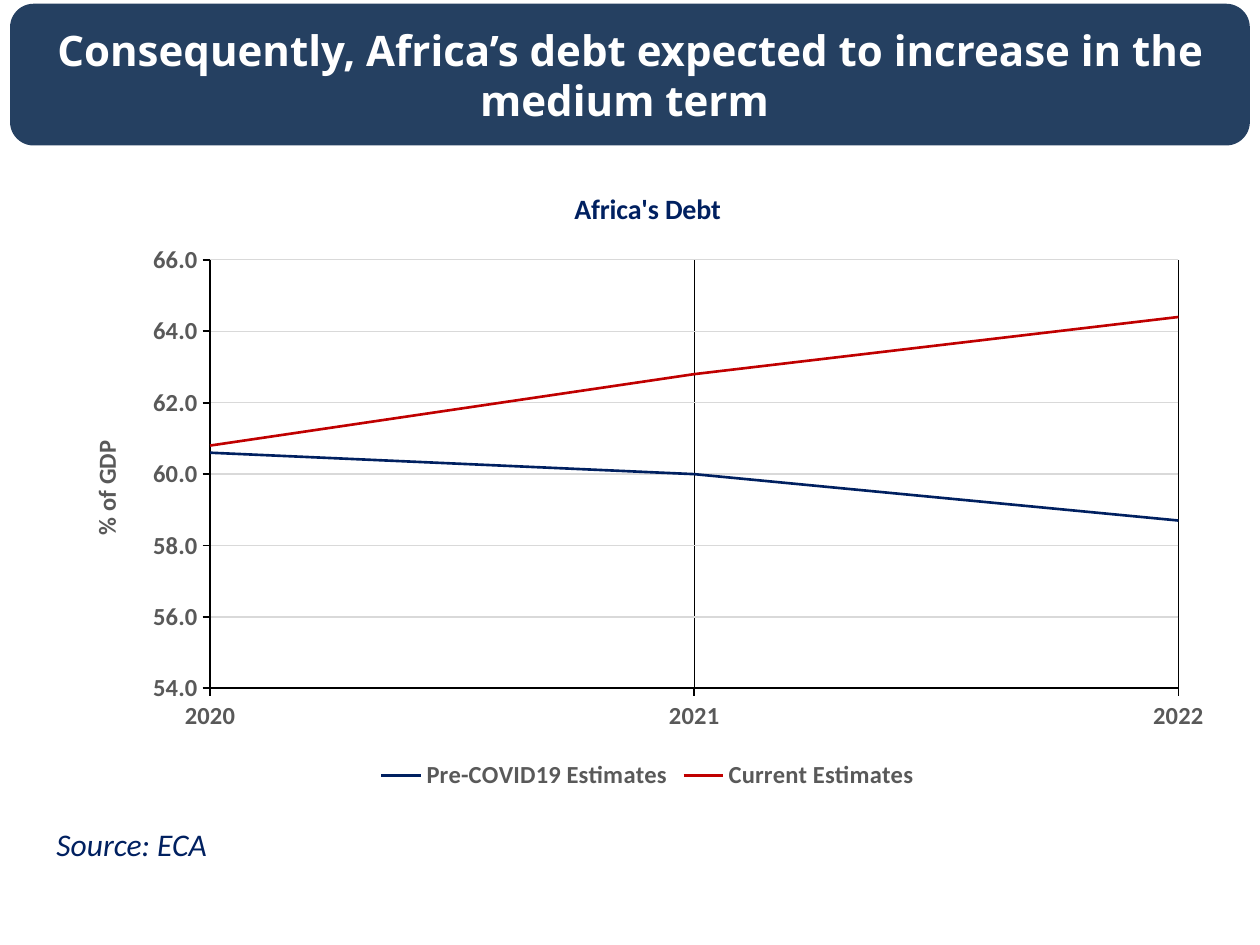
from lxml import etree
from pptx import Presentation
from pptx.chart.data import CategoryChartData
from pptx.dml.color import RGBColor
from pptx.enum.chart import XL_CHART_TYPE, XL_LEGEND_POSITION, XL_TICK_MARK
from pptx.enum.shapes import MSO_SHAPE
from pptx.enum.text import MSO_ANCHOR, PP_ALIGN
from pptx.oxml.ns import qn
from pptx.util import Inches, Pt

LINE = XL_CHART_TYPE.LINE
BOTTOM = XL_LEGEND_POSITION.BOTTOM
TICK_OUT, TICK_NONE = XL_TICK_MARK.OUTSIDE, XL_TICK_MARK.NONE
ROUNDED = MSO_SHAPE.ROUNDED_RECTANGLE
MIDDLE = MSO_ANCHOR.MIDDLE
CENTER, LEFT = PP_ALIGN.CENTER, PP_ALIGN.LEFT

SLIDE_WIDTH, SLIDE_HEIGHT = Inches(10), Inches(7.5)
BANNER, NAVY, RED = "254061", "002060", "C00000"
WHITE, BLACK, GREY, PALE = "FFFFFF", "000000", "595959", "D9D9D9"


def rgb(value):
    return RGBColor.from_string(value)


def style_font(font, size, color, name="Calibri", bold=False, italic=False):
    font.size, font.name = Pt(size), name
    font.bold, font.italic = bold, italic
    font.color.rgb = rgb(color)


def style_line(line, color, width):
    line.color.rgb = rgb(color)
    line.width = Pt(width)


def set_title(title, text, size, color):
    title.text_frame.text = text
    run = title.text_frame.paragraphs[0].runs[0]
    style_font(run.font, size, color, bold=True)


def place_plot(chart, x, y, w, h):
    """Fix the inner plot area, in shares of the chart's size."""
    plot_area = chart.plots[0]._element.getparent()
    for old in plot_area.findall(qn("c:layout")):
        plot_area.remove(old)
    layout = etree.Element(qn("c:layout"))
    manual = etree.SubElement(layout, qn("c:manualLayout"))
    settings = dict(layoutTarget="inner", xMode="edge", yMode="edge",
                    x=x, y=y, w=w, h=h)
    for tag, value in settings.items():
        etree.SubElement(manual, qn(f"c:{tag}")).set("val", str(value))
    plot_area.insert(0, layout)


class DebtSlide:
    """Places elements on one slide by shares of its size."""

    def __init__(self, presentation):
        self.slide = presentation.slides.add_slide(presentation.slide_layouts[6])

    def box(self, x, y, w, h):
        return (int(x * SLIDE_WIDTH), int(y * SLIDE_HEIGHT),
                int(w * SLIDE_WIDTH), int(h * SLIDE_HEIGHT))

    def set_text(self, frame, text, align, **font):
        frame.word_wrap = True
        frame.text = text
        paragraph = frame.paragraphs[0]
        paragraph.alignment = align
        style_font(paragraph.runs[0].font, **font)

    def banner(self, area, text):
        banner = self.slide.shapes.add_shape(ROUNDED, *self.box(*area))
        banner.shadow.inherit = False
        banner.fill.solid()
        banner.fill.fore_color.rgb = rgb(BANNER)
        banner.line.fill.background()
        frame = banner.text_frame
        frame.vertical_anchor = MIDDLE
        frame.margin_top = frame.margin_bottom = Inches(0.1)
        self.set_text(frame, text, CENTER, size=24, color=WHITE,
                      name="Noto Sans", bold=True)

    def source(self, area, text):
        note = self.slide.shapes.add_textbox(*self.box(*area))
        self.set_text(note.text_frame, text, LEFT,
                      size=18, color=NAVY, italic=True)

    def line_chart(self, area, title, unit, years, estimates):
        """Draw estimates, a dict of name to (colour, values)."""
        data = CategoryChartData(number_format="0.0")
        data.categories = years
        for name, (_, values) in estimates.items():
            data.add_series(name, values)
        chart = self.slide.shapes.add_chart(LINE, *self.box(*area), data).chart
        style_font(chart.font, 10, BLACK)
        set_title(chart.chart_title, title, 16, NAVY)

        for series, (color, _) in zip(chart.plots[0].series, estimates.values()):
            series.smooth = False
            style_line(series.format.line, color, 1.5)

        grids = ((chart.category_axis, BLACK, 0.5), (chart.value_axis, PALE, 0.75))
        for axis, color, width in grids:
            axis.major_tick_mark, axis.minor_tick_mark = TICK_OUT, TICK_NONE
            style_font(axis.tick_labels.font, 14, GREY, bold=True)
            style_line(axis.format.line, BLACK, 1)
            axis.has_major_gridlines = True
            style_line(axis.major_gridlines.format.line, color, width)

        percent = chart.value_axis
        percent.minimum_scale, percent.maximum_scale = 54, 66
        percent.major_unit = 2
        percent.tick_labels.number_format = "0.0"
        percent.tick_labels.number_format_is_linked = False
        set_title(percent.axis_title, unit, 14, GREY)
        # Lines start on the axis instead of half a category in.
        crossing = percent._element.find(qn("c:crossBetween"))
        if crossing is None:
            crossing = etree.Element(qn("c:crossBetween"))
            percent._element.find(qn("c:majorUnit")).addprevious(crossing)
        crossing.set("val", "midCat")

        chart.has_legend = True
        chart.legend.position = BOTTOM
        chart.legend.include_in_layout = False
        style_font(chart.legend.font, 14, GREY, bold=True)
        place_plot(chart, 0.125, 0.15, 0.83, 0.68)


def main():
    presentation = Presentation()
    presentation.slide_width = SLIDE_WIDTH
    presentation.slide_height = SLIDE_HEIGHT
    debt = DebtSlide(presentation)
    debt.banner((0.008, 0.004, 0.984, 0.15),
                "Consequently, Africa’s debt expected to increase "
                "in the medium term ")
    debt.source((0.035, 0.867, 0.4, 0.053), "Source: ECA")
    debt.line_chart(
        (0.051, 0.175, 0.926, 0.667), "Africa's Debt", "% of GDP",
        ("2020", "2021", "2022"),
        {"Pre-COVID19 Estimates": (NAVY, (60.6, 60.0, 58.7)),
         "Current Estimates": (RED, (60.8, 62.8, 64.4))})
    presentation.save("out.pptx")


if __name__ == "__main__":
    main()
